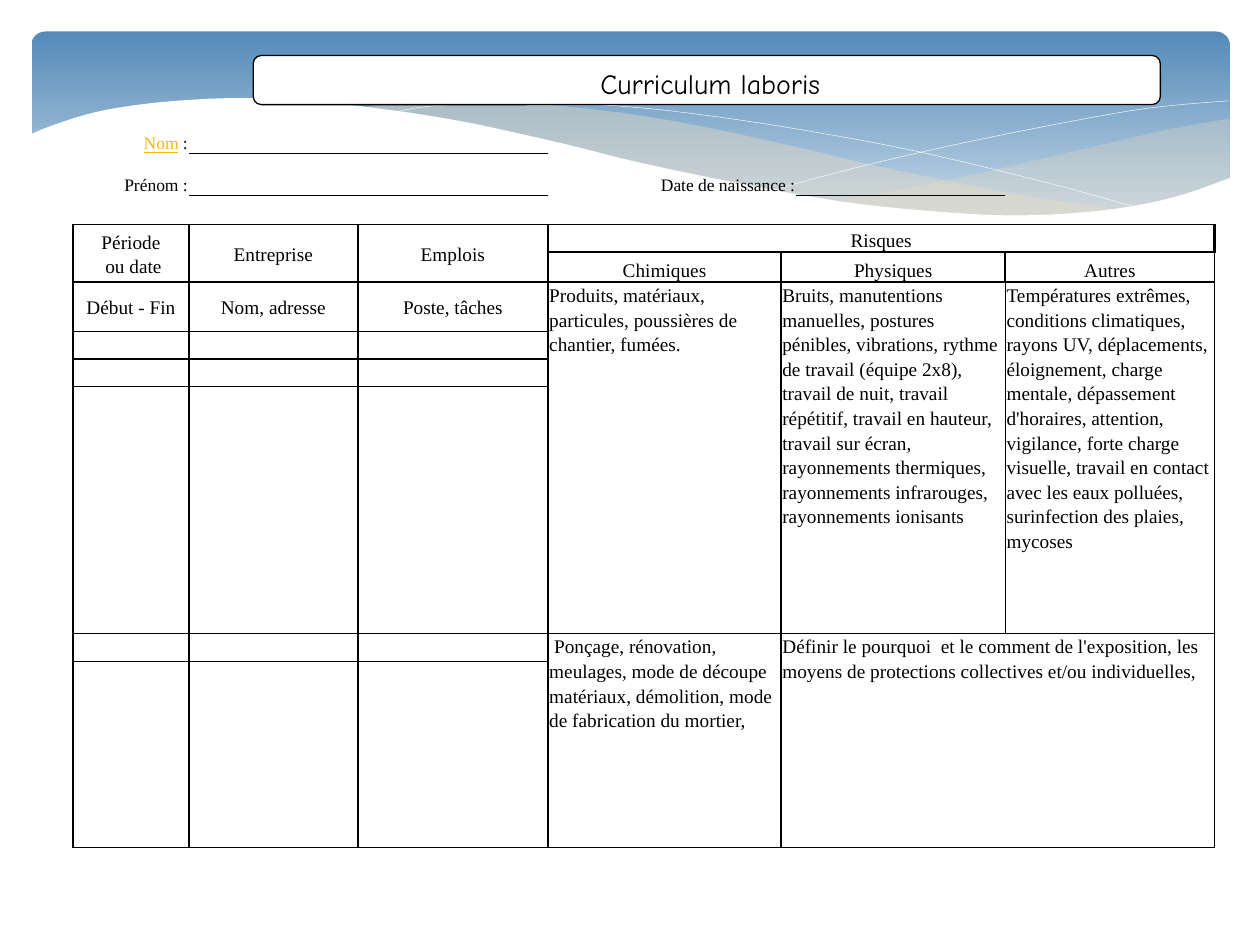
from lxml import etree
from pptx import Presentation
from pptx.dml.color import RGBColor
from pptx.enum.shapes import MSO_SHAPE
from pptx.enum.text import MSO_ANCHOR, PP_ALIGN
from pptx.oxml.ns import qn
from pptx.util import Inches, Pt

ROUND = MSO_SHAPE.ROUNDED_RECTANGLE
TOP, MIDDLE, BOTTOM = MSO_ANCHOR.TOP, MSO_ANCHOR.MIDDLE, MSO_ANCHOR.BOTTOM
LEFT, CENTER, RIGHT = PP_ALIGN.LEFT, PP_ALIGN.CENTER, PP_ALIGN.RIGHT
FONT, TITLE_FONT = "Times New Roman", "Comic Neue"
COLORS = {"ink": "000000", "paper": "FFFFFF", "link": "F7B615",
          "sky": "558BB8", "haze": "BFD3E4", "sand": "EBDDC3"}

# Table content: (row, column, row span, column span, text, alignment, anchor)
COLS = [0.92, 1.34, 1.51, 1.85, 0.12, 1.66, 1.66]
ROWS = [0.23, 0.33, 0.23, 0.22, 0.24, 0.39, 0.22, 0.22, 1.96, 0.22, 1.48]
FORM_ROWS, HEAD_ROWS = 3, (3, 4)
FORM_LINES = {(0, 1), (0, 2), (1, 1), (1, 2), (1, 5)}
CELLS = [
    (0, 0, 1, 1, "Nom :", RIGHT, BOTTOM),
    (0, 3, 1, 2, "", LEFT, TOP),
    (1, 0, 1, 1, "Prénom :", RIGHT, BOTTOM),
    (1, 3, 1, 2, "Date de naissance :", RIGHT, BOTTOM),
    (2, 3, 1, 2, "", LEFT, TOP),
    (3, 0, 2, 1, "Période\v ou date", CENTER, MIDDLE),
    (3, 1, 2, 1, "Entreprise", CENTER, MIDDLE),
    (3, 2, 2, 1, "Emplois", CENTER, MIDDLE),
    (3, 3, 1, 4, "Risques", CENTER, BOTTOM),
    (4, 3, 1, 1, "Chimiques", CENTER, BOTTOM),
    (4, 4, 1, 2, "Physiques", CENTER, BOTTOM),
    (4, 6, 1, 1, "Autres", CENTER, BOTTOM),
    (5, 0, 1, 1, "Début - Fin", CENTER, MIDDLE),
    (5, 1, 1, 1, "Nom, adresse", CENTER, MIDDLE),
    (5, 2, 1, 1, "Poste, tâches", CENTER, MIDDLE),
    (5, 3, 4, 1, "Produits, matériaux, particules, poussières de chantier, fumées.",
     LEFT, TOP),
    (5, 4, 4, 2, "Bruits, manutentions manuelles, postures pénibles, vibrations, "
     "rythme de travail (équipe 2x8), travail de nuit, travail répétitif, travail en "
     "hauteur, travail sur écran, rayonnements thermiques, rayonnements infrarouges, "
     "rayonnements ionisants", LEFT, TOP),
    (5, 6, 4, 1, "Températures extrêmes, conditions climatiques, rayons UV, "
     "déplacements, éloignement, charge mentale, dépassement d'horaires, attention, "
     "vigilance, forte charge visuelle, travail en contact avec les eaux polluées, "
     "surinfection des plaies, mycoses", LEFT, TOP),
    (9, 3, 2, 1, " Ponçage, rénovation, meulages, mode de découpe matériaux, "
     "démolition, mode de fabrication du mortier,", LEFT, TOP),
    (9, 4, 2, 3, "Définir le pourquoi  et le comment de l'exposition, les moyens de "
     "protections collectives et/ou individuelles,", LEFT, TOP),
]

# Waves: each is a list of smooth curves joined by straight lines, in inches
WAVES = [
    {"fill": "sand", "alpha": 29, "curves": [
        [(9.76, 0.94), (9.21, 1.04), (8.61, 1.18), (7.79, 1.37), (7.06, 1.52), (6.61, 1.6)],
        [(6.61, 1.6), (7.19, 1.67), (7.81, 1.72), (8.35, 1.72), (8.89, 1.66),
         (9.35, 1.56), (9.76, 1.41)]]},
    {"fill": "sand", "alpha": 40, "curves": [
        [(8.93, 1.67), (8.07, 1.54), (7.06, 1.34), (6.29, 1.16), (5.55, 1), (4.89, 0.89),
         (4.2, 0.82), (3.61, 0.8), (3.13, 0.82), (2.86, 0.86)],
        [(2.86, 0.86), (3.62, 0.97), (4.49, 1.16), (5.3, 1.35), (6.01, 1.5), (6.8, 1.63),
         (7.48, 1.7), (8.07, 1.73), (8.57, 1.71), (8.93, 1.67)]]},
    {"line": "paper", "curves": [
        [(3.09, 0.9), (3.44, 0.84), (4.16, 0.81), (4.89, 0.84), (5.56, 0.91),
         (6.36, 1.03), (7.27, 1.2), (8.31, 1.45), (9.07, 1.66)]]},
    {"line": "paper", "curves": [
        [(6.13, 1.51), (6.72, 1.35), (7.48, 1.17), (8.36, 0.99), (9.1, 0.86), (9.75, 0.8)]]},
    {"fill": "paper", "curves": [
        [(9.77, 1.41), (9.3, 1.57), (8.75, 1.67), (8.09, 1.71), (7.44, 1.68), (6.68, 1.6),
         (5.79, 1.44), (5.03, 1.28), (4.47, 1.14), (3.65, 0.96), (2.92, 0.85), (2.3, 0.79),
         (1.77, 0.78), (1.19, 0.82), (0.76, 0.89), (0.46, 0.98), (0.23, 1.07)],
        [(0.23, 2.24), (9.77, 2.24)]]},
]
UNITS = 1000  # freeform points are whole numbers, so count in 1/1000 inch


def rgb(name):
    return RGBColor.from_string(COLORS[name])


def smooth(knots, steps=5):
    """Points of a Catmull-Rom curve through the knots."""
    ends = [knots[0], *knots, knots[-1]]
    pts = [knots[0]]
    for a, b, c, d in zip(ends, ends[1:], ends[2:], ends[3:]):
        for t in (i / steps for i in range(1, steps + 1)):
            pts.append(tuple(
                (2 * q + (r - p) * t + (2 * p - 5 * q + 4 * r - w) * t ** 2
                 + (3 * q - p - 3 * r + w) * t ** 3) / 2
                for p, q, r, w in zip(a, b, c, d)))
    return pts


def add_wave(s, wave):
    pts = [(round(x * UNITS), round(y * UNITS))
           for curve in wave["curves"] for x, y in smooth(curve)]
    fb = s.shapes.build_freeform(*pts[0], scale=Inches(1) / UNITS)
    fb.add_line_segments(pts[1:], close="fill" in wave)
    sp = fb.convert_to_shape()
    sp.shadow.inherit = False
    if "fill" in wave:
        sp.fill.solid()
        sp.fill.fore_color.rgb = rgb(wave["fill"])
        sp.line.fill.background()
    else:
        sp.fill.background()
        sp.line.color.rgb = rgb(wave["line"])
        sp.line.width = Pt(0.25)
    if "alpha" in wave:
        color = sp._element.spPr.find(".//" + qn("a:srgbClr"))
        etree.SubElement(color, qn("a:alpha"), val=str(wave["alpha"] * 1000))


def set_border(cell, side, width):
    """Draw one side of a cell; a width of 0 hides it."""
    ln = etree.SubElement(cell._tc.get_or_add_tcPr(), qn("a:ln" + side), w=str(Pt(width)))
    if width:
        fill = etree.SubElement(ln, qn("a:solidFill"))
        etree.SubElement(fill, qn("a:srgbClr"), val=COLORS["ink"])
    else:
        etree.SubElement(ln, qn("a:noFill"))


def border_width(row, col, side):
    if row < FORM_ROWS:
        ruled = (side == "B" and (row == FORM_ROWS - 1 or (row, col) in FORM_LINES)
                 or side == "T" and (row - 1, col) in FORM_LINES)
        return 1 if ruled else 0
    outer = (side, row) == ("T", FORM_ROWS) or (side, col) in (("L", 0), ("R", len(COLS) - 1))
    heavy = row in HEAD_ROWS or (side, row) == ("T", HEAD_ROWS[-1] + 1)
    return 1.5 if heavy and not outer else 1


def add_record_table(s):
    tbl = s.shapes.add_table(len(ROWS), len(COLS), Inches(0.58), Inches(0.99),
                             Inches(sum(COLS)), Inches(sum(ROWS))).table
    tbl.first_row = tbl.horz_banding = False
    for col, width in zip(tbl.columns, COLS):
        col.width = Inches(width)
    for row, height in zip(tbl.rows, ROWS):
        row.height = Inches(height)

    areas = {(r, c): (r, c, 1, 1, "", LEFT, TOP)
             for r in range(len(ROWS)) for c in range(len(COLS))}
    for area in CELLS:
        r0, c0, nr, nc = area[:4]
        areas.update({(r, c): area for r in range(r0, r0 + nr) for c in range(c0, c0 + nc)})
        if nr * nc > 1:
            tbl.cell(r0, c0).merge(tbl.cell(r0 + nr - 1, c0 + nc - 1))

    for (r, c), (r0, c0, nr, nc, text, align, anchor) in areas.items():
        cell = tbl.cell(r, c)
        cell.margin_left = cell.margin_right = Inches(0.01)
        cell.margin_top = cell.margin_bottom = 0
        cell.vertical_anchor = anchor
        # The first cell of a merged area carries all four of its sides
        first = (r, c) == (r0, c0)
        edges = {"L": c == c0, "R": c == c0 + nc - 1, "T": r == r0, "B": r == r0 + nr - 1}
        for side, on_edge in edges.items():
            set_border(cell, side, border_width(r, c, side) if on_edge or first else 0)
        cell.fill.background()
        p = cell.text_frame.paragraphs[0]
        p.alignment, p.line_spacing = align, 1.15
        p.font.name, p.font.color.rgb = FONT, rgb("ink")
        p.font.size = Pt(10 if r < FORM_ROWS else 11)
        if (r, c) == (0, 0):
            label, rest = text.split(" ")
            link = p.add_run()
            link.text = label
            link.font.underline = True
            link.font.color.rgb = rgb("link")
            p.add_run().text = " " + rest
        elif first and text:
            p.text = text


def add_round_box(s, left, top, width, height):
    box = s.shapes.add_shape(ROUND, *map(Inches, (left, top, width, height)))
    box.shadow.inherit = False
    return box


prs = Presentation()
prs.slide_width, prs.slide_height = Inches(10), Inches(7.5)
s = prs.slides.add_slide(prs.slide_layouts[6])

# Sky band and waves
band = add_round_box(s, 0.25, 0.25, 9.51, 1.56)
band.adjustments[0] = 0.07
band.line.fill.background()
band.fill.gradient()
band.fill.gradient_angle = 270
for stop, name, pos in zip(band.fill.gradient_stops, ("sky", "haze"), (0, 0.9)):
    stop.color.rgb, stop.position = rgb(name), pos
for wave in WAVES:
    add_wave(s, wave)

add_record_table(s)

# Heading in a rounded box
heading = add_round_box(s, 2.01, 0.44, 7.2, 0.39)
heading.fill.solid()
heading.fill.fore_color.rgb = rgb("paper")
heading.line.color.rgb, heading.line.width = rgb("ink"), Pt(0.75)
tf = heading.text_frame
tf.vertical_anchor = MIDDLE
tf.margin_left = tf.margin_right = tf.margin_top = Inches(0.05)
tf.margin_bottom = 0
p = tf.paragraphs[0]
p.text, p.alignment = "Curriculum laboris ", CENTER
p._p.get_or_add_pPr().set("rtl", "1")
p.font.name, p.font.size, p.font.color.rgb = TITLE_FONT, Pt(16), rgb("ink")

prs.save("out.pptx")
